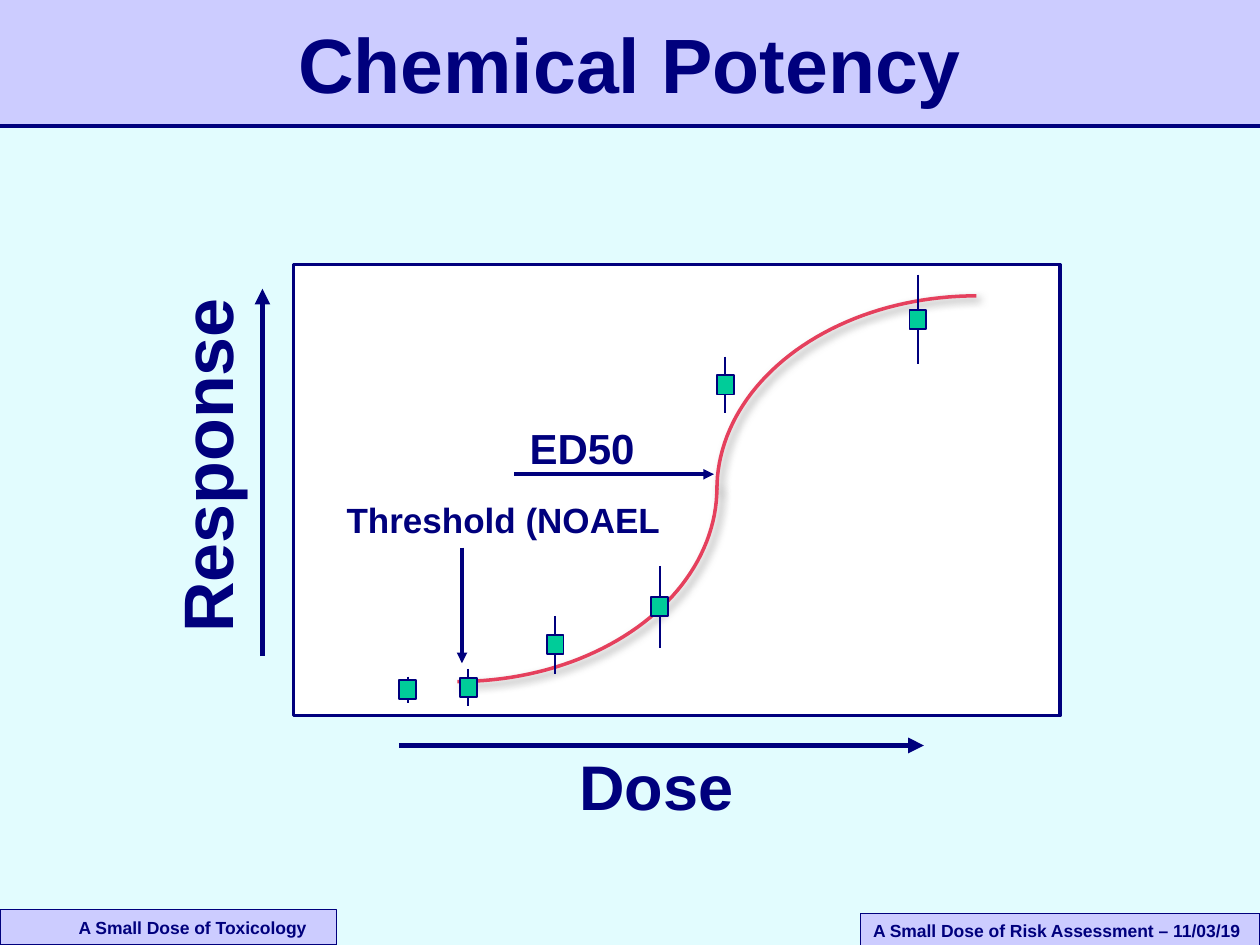
from math import cos, radians, sin

from lxml import etree
from pptx import Presentation
from pptx.dml.color import RGBColor
from pptx.enum import shapes, text
from pptx.oxml import ns
from pptx.util import Pt

NAVY, LILAC, WHITE, GREEN, RED = "00007D", "CCCCFF", "FFFFFF", "00CC99", "E5405D"
WIDTH, HEIGHT = 720, 540
HEADER = 72
MARKER_W, MARKER_H = 9.6, 11
CURVE_RX, CURVE_RY = 148.3, 110.9

FOOTERS = [
    ("A Small Dose of Risk Assessment – 11/03/19", (491.8, 522, 228.2, 19.4), 7.2),
    ("A Small Dose of Toxicology", (0, 519.8, 192.2, 20.2), 45),
]
PLOT = (167.8, 151.2, 437.8, 257.8)
CURVES = [((558, 280), 180), ((261.4, 278.6), 0)]
DATA = [
    (377, 346.7, 323.3, 370.1),
    (317.3, 368.3, 352, 385.2),
    (524.5, 182.5, 157, 208),
    (414.5, 220, 203.8, 236.2),
    (233, 394.2, 386.6, 401.8),
    (267.6, 392.8, 382.3, 403.2),
]
LABELS = [
    ("Chemical Potency", (54, 5.8, 612, 59.8), 44, 0),
    ("Dose", (324, 423.4, 102.2, 50.4), 36, 0),
    ("Response", (15.1, 238.3, 205.2, 55.4), 40, 270),
    ("Threshold (NOAEL", (190.8, 281.5, 193.7, 31), 20, 0),
    ("ED50", (295.2, 237.6, 74.9, 36), 24, 0),
]
ARROWS = [
    ((264, 313), (264, 379), 2),
    ((294, 271), (408, 271), 2),
    ((228, 426), (528, 426), 3),
    ((150, 375), (150, 165), 3),
]


def rgb(value):
    return RGBColor.from_string(value)


def add_rect(box, fill, width=0):
    s = slide.shapes.add_shape(shapes.MSO_SHAPE.RECTANGLE, *map(Pt, box))
    s.shadow.inherit = False
    s.fill.solid()
    s.fill.fore_color.rgb = rgb(fill)
    if width:
        s.line.color.rgb = rgb(NAVY)
        s.line.width = Pt(width)
    else:
        s.line.fill.background()
    return s


def add_line(start, end, width, arrow=False):
    s = slide.shapes.add_connector(
        shapes.MSO_CONNECTOR.STRAIGHT, *map(Pt, start + end))
    s.line.color.rgb = rgb(NAVY)
    s.line.width = Pt(width)
    if arrow:
        etree.SubElement(s.line._get_or_add_ln(), ns.qn("a:tailEnd"), type="triangle")
    etree.SubElement(s._element.spPr, ns.qn("a:effectLst"))


def add_curve(center, first_angle):
    cx, cy = center
    points = [(Pt(cx + CURVE_RX * cos(radians(a))), Pt(cy + CURVE_RY * sin(radians(a))))
              for a in range(first_angle, first_angle + 91, 2)]
    builder = slide.shapes.build_freeform(*points[0])
    builder.add_line_segments(points[1:], close=False)
    s = builder.convert_to_shape()
    s.fill.background()
    s.line.color.rgb = rgb(RED)
    s.line.width = Pt(2)
    s.shadow.inherit = False
    effects = s._element.spPr.find(ns.qn("a:effectLst"))
    shadow = etree.SubElement(effects, ns.qn("a:outerShdw"), blurRad=str(Pt(5)),
                              dist=str(Pt(3)), dir="2700000", rotWithShape="0")
    color = etree.SubElement(shadow, ns.qn("a:srgbClr"), val="808080")
    etree.SubElement(color, ns.qn("a:alpha"), val="75000")


def set_text(s, words, size, align, wrap):
    tf = s.text_frame
    tf.text = words
    tf.word_wrap = wrap
    tf.vertical_anchor = text.MSO_ANCHOR.MIDDLE
    p = tf.paragraphs[0]
    p.alignment = align
    font = p.runs[0].font
    font.name, font.size, font.bold = "Arial", Pt(size), True
    font.color.rgb = rgb(NAVY)


prs = Presentation()
prs.slide_width, prs.slide_height = Pt(WIDTH), Pt(HEIGHT)
slide = prs.slides.add_slide(prs.slide_layouts[6])
slide.background.fill.solid()
slide.background.fill.fore_color.rgb = rgb("E2FCFE")

add_rect((0, 0, WIDTH, HEADER), LILAC)
add_line((0, HEADER), (WIDTH, HEADER), 2)
for words, box, indent in FOOTERS:
    s = add_rect(box, LILAC, 0.75)
    set_text(s, words, 10, text.PP_ALIGN.LEFT, True)
    s.text_frame.margin_left = Pt(indent)
    s.text_frame.margin_right = 0

add_rect(PLOT, WHITE, 2)
for center, first_angle in CURVES:
    add_curve(center, first_angle)
for x, y, top, bottom in DATA:
    add_line((x, top), (x, bottom), 1)
    add_rect((x - MARKER_W / 2, y - MARKER_H / 2, MARKER_W, MARKER_H), GREEN, 1)

for words, box, size, rotation in LABELS:
    s = slide.shapes.add_textbox(*map(Pt, box))
    s.rotation = rotation
    set_text(s, words, size, text.PP_ALIGN.CENTER, False)
for start, end, width in ARROWS:
    add_line(start, end, width, arrow=True)

prs.save("out.pptx")
